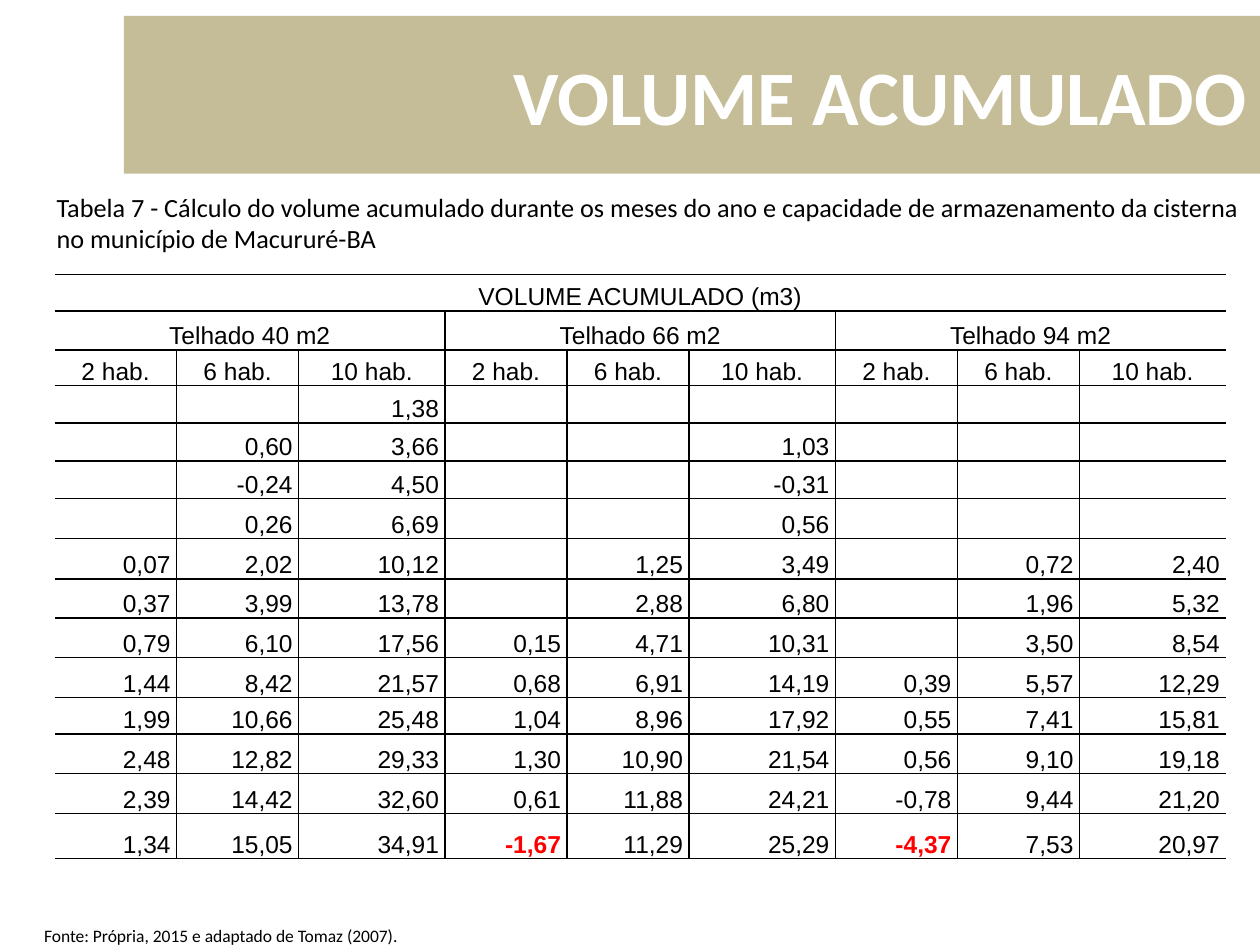
from dataclasses import dataclass

import pptx
import pptx.dml.color
import pptx.enum.shapes
import pptx.enum.text
import pptx.oxml.ns
import pptx.util
from lxml import etree

Cm = pptx.util.Cm
Pt = pptx.util.Pt
ALIGN = pptx.enum.text.PP_ALIGN
ANCHOR = pptx.enum.text.MSO_ANCHOR
qn = pptx.oxml.ns.qn


@dataclass(frozen=True)
class Theme:
    band: str = "C4BD97"
    light: str = "FFFFFF"
    text: str = "000000"
    deficit: str = "FF0000"
    heading_font: str = "Calibri"
    table_font: str = "Arial"
    title_size: int = 44
    caption_size: int = 15
    table_size: int = 14
    source_size: int = 10


THEME = Theme()

ROOFS = ["Telhado 40 m2", "Telhado 66 m2", "Telhado 94 m2"]
HOUSEHOLDS = ["2 hab.", "6 hab.", "10 hab."]
VOLUMES = [
    ["", "", "1,38", "", "", "", "", "", ""],
    ["", "0,60", "3,66", "", "", "1,03", "", "", ""],
    ["", "-0,24", "4,50", "", "", "-0,31", "", "", ""],
    ["", "0,26", "6,69", "", "", "0,56", "", "", ""],
    ["0,07", "2,02", "10,12", "", "1,25", "3,49", "", "0,72", "2,40"],
    ["0,37", "3,99", "13,78", "", "2,88", "6,80", "", "1,96", "5,32"],
    ["0,79", "6,10", "17,56", "0,15", "4,71", "10,31", "", "3,50", "8,54"],
    ["1,44", "8,42", "21,57", "0,68", "6,91", "14,19", "0,39", "5,57", "12,29"],
    ["1,99", "10,66", "25,48", "1,04", "8,96", "17,92", "0,55", "7,41", "15,81"],
    ["2,48", "12,82", "29,33", "1,30", "10,90", "21,54", "0,56", "9,10", "19,18"],
    ["2,39", "14,42", "32,60", "0,61", "11,88", "24,21", "-0,78", "9,44", "21,20"],
    ["1,34", "15,05", "34,91", "-1,67", "11,29", "25,29", "-4,37", "7,53", "20,97"],
]
DEFICITS = {"-1,67", "-4,37"}
HOUSEHOLD_WIDTHS = [2.46, 2.46, 2.95]
ROW_HEIGHTS = [0.74, 0.79, 0.71, 0.76, 0.76, 0.76, 0.81, 0.81,
               0.79, 0.79, 0.81, 0.74, 0.79, 0.81, 0.91]


def write_text(frame, text, *, size, font=THEME.heading_font, color=THEME.text,
               bold=False, align=ALIGN.LEFT, line_spacing=None):
    paragraph = frame.paragraphs[0]
    paragraph.alignment = align
    paragraph.line_spacing = line_spacing
    if not text:
        # An empty cell keeps the row low only if its end mark has the table size.
        etree.SubElement(paragraph._p, qn("a:endParaRPr"), sz=str(size * 100))
        return
    run = paragraph.add_run()
    run.text = text
    run.font.name = font
    run.font.size = Pt(size)
    run.font.bold = bold
    run.font.color.rgb = pptx.dml.color.RGBColor.from_string(color)


def add_title_band(slide, left, top, width, height):
    band = slide.shapes.add_shape(pptx.enum.shapes.MSO_SHAPE.RECTANGLE,
                                  left, top, width, height)
    band.shadow.inherit = False
    band.fill.solid()
    band.fill.fore_color.rgb = pptx.dml.color.RGBColor.from_string(THEME.band)
    band.line.fill.background()
    band.text_frame.word_wrap = True
    band.text_frame.vertical_anchor = ANCHOR.MIDDLE
    write_text(band.text_frame, "VOLUME ACUMULADO", size=THEME.title_size,
               color=THEME.light, bold=True, align=ALIGN.RIGHT)


def add_note(slide, left, top, width, height, text, size):
    box = slide.shapes.add_textbox(left, top, width, height)
    box.text_frame.word_wrap = True
    write_text(box.text_frame, text, size=size)


def set_borders(cell, sides):
    """Draw the sides named, in the order L, R, T, B; the others stay open."""
    properties = cell._tc.get_or_add_tcPr()
    for side in "LRTB":
        line = etree.SubElement(properties, qn(f"a:ln{side}"), w=str(Pt(1)))
        if side in sides:
            fill = etree.SubElement(line, qn("a:solidFill"))
            etree.SubElement(fill, qn("a:srgbClr"), val=THEME.text)
        else:
            etree.SubElement(line, qn("a:noFill"))


def add_volume_table(slide, left, top, width, height):
    columns = len(ROOFS) * len(HOUSEHOLDS)
    headers = [["VOLUME ACUMULADO (m3)"], ROOFS, HOUSEHOLDS * len(ROOFS)]
    rows = headers + VOLUMES
    table = slide.shapes.add_table(len(rows), columns, left, top, width, height).table
    table.first_row = False
    table.horz_banding = False
    for column, column_width in zip(table.columns, HOUSEHOLD_WIDTHS * len(ROOFS)):
        column.width = Cm(column_width)

    for row_index, values in enumerate(rows):
        table.rows[row_index].height = Cm(ROW_HEIGHTS[row_index])
        span = columns // len(values)
        for column_index in range(columns):
            cell = table.cell(row_index, column_index)
            starts_span = column_index % span == 0
            sides = "TB"
            if starts_span and column_index > 0:
                sides += "L"
            if starts_span and column_index + span < columns:
                sides += "R"
            set_borders(cell, sides)
            cell.fill.background()
            cell.margin_left = cell.margin_right = Cm(0.12)
            cell.margin_top = cell.margin_bottom = 0
            cell.vertical_anchor = ANCHOR.BOTTOM
            text = values[column_index // span] if starts_span else ""
            deficit = text in DEFICITS
            write_text(cell.text_frame, text, size=THEME.table_size,
                       font=THEME.table_font, bold=deficit,
                       color=THEME.deficit if deficit else THEME.text,
                       align=ALIGN.CENTER if row_index < len(headers) else ALIGN.RIGHT,
                       line_spacing=1.15)
        if span > 1:
            for start in range(0, columns, span):
                table.cell(row_index, start).merge(
                    table.cell(row_index, start + span - 1))


def main():
    presentation = pptx.Presentation()
    presentation.slide_width = Cm(25.4)
    presentation.slide_height = Cm(19.05)
    slide = presentation.slides.add_slide(presentation.slide_layouts[6])
    add_title_band(slide, Cm(2.5), Cm(0.32), Cm(22.9), Cm(3.18))
    add_note(slide, Cm(0.89), Cm(3.73), Cm(24.5), Cm(1.55),
             "Tabela 7 - Cálculo do volume acumulado durante os meses do ano e "
             "capacidade de armazenamento da cisterna no município de Macururé-BA",
             THEME.caption_size)
    add_note(slide, Cm(0.64), Cm(18.52), Cm(8.61), Cm(0.69),
             "Fonte: Própria, 2015 e adaptado de Tomaz (2007).", THEME.source_size)
    add_volume_table(slide, Cm(1.1), Cm(5.53), Cm(23.6), Cm(11.8))
    presentation.save("out.pptx")


if __name__ == "__main__":
    main()
